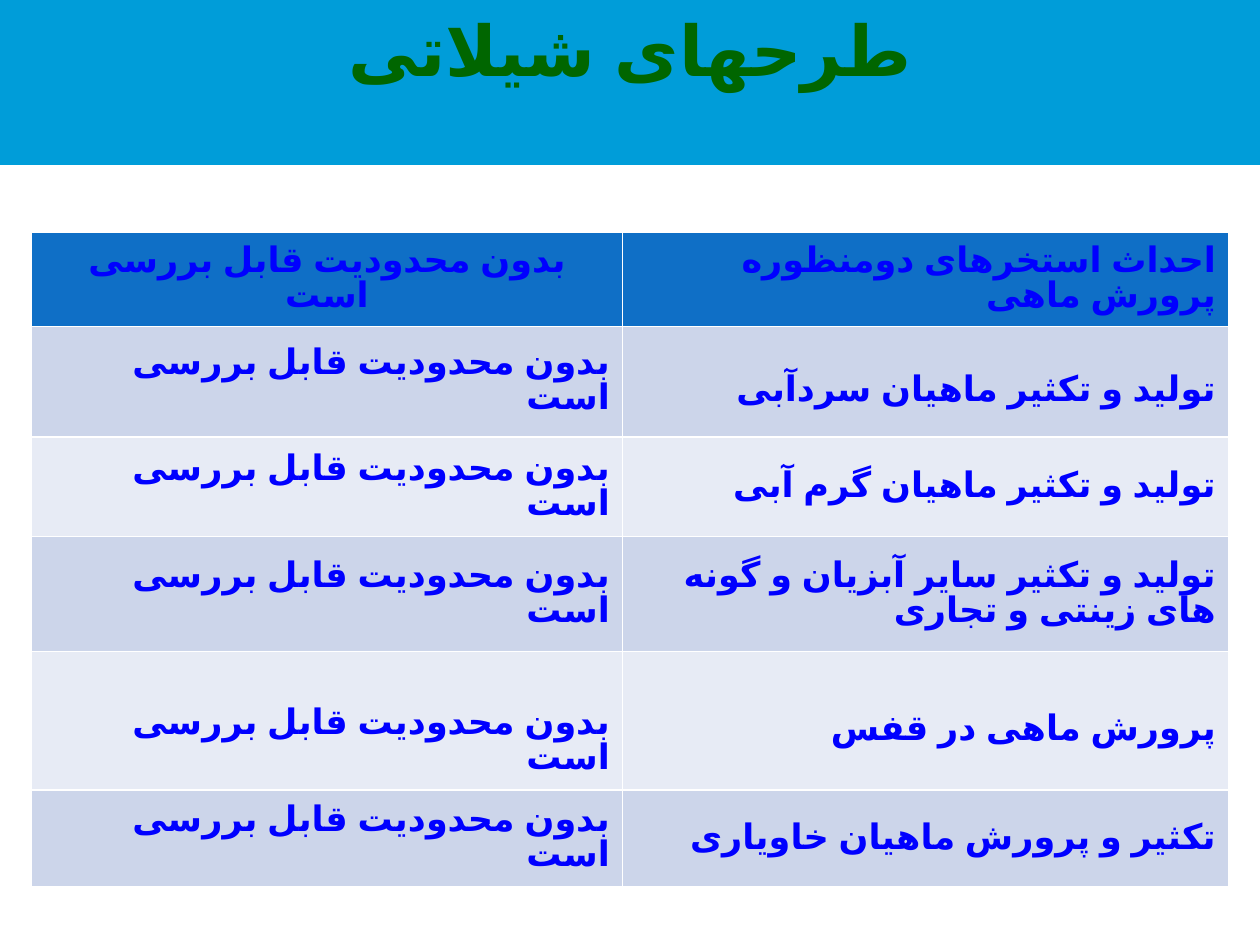
from pptx import Presentation
from pptx.dml.color import RGBColor
from pptx.enum.text import MSO_ANCHOR, PP_ALIGN
from pptx.util import Inches, Pt

FACE = "Vollkorn"
SKY = RGBColor(0x00, 0x9D, 0xD9)
GREEN = RGBColor(0x00, 0x66, 0x00)
BLUE = RGBColor(0x00, 0x00, 0xFF)
HEAD = RGBColor(0x0F, 0x6F, 0xC6)
BANDS = [RGBColor(0xE7, 0xEB, 0xF5), RGBColor(0xCC, 0xD5, 0xEA)]

STATUS = "بدون محدودیت قابل بررسی است"
PLANS = [
    ("احداث استخرهای دومنظوره پرورش ماهی", 0.75, None),
    ("تولید و تکثیر ماهیان سردآبی", 0.88, 1.5),
    ("تولید و تکثیر ماهیان گرم آبی", 0.79, None),
    ("تولید و تکثیر سایر آبزیان و گونه های زینتی و تجاری", 0.91, None),
    ("پرورش ماهی در قفس", 1.1, 1.5),
    ("تکثیر و پرورش ماهیان خاویاری", 0.77, None),
]
CAGE = 4


def write(frame, text, align, size, color, space=None):
    para = frame.paragraphs[0]
    para.alignment = align
    para.line_spacing = space
    para._p.get_or_add_pPr().set("rtl", "1")
    run = para.add_run()
    run.text = text
    run.font.color.rgb = color
    for key, value in {"size": Pt(size), "bold": True, "name": FACE}.items():
        setattr(run.font, key, value)
    run._r.get_or_add_rPr().set("lang", "fa-IR")


def paint(part, color):
    part.fill.solid()
    part.fill.fore_color.rgb = color


def add_title(slide, left, top, width, height):
    title = slide.shapes.title
    box = {"left": left, "top": top, "width": width, "height": height}
    for key, value in box.items():
        setattr(title, key, value)
    paint(title, SKY)
    title.text_frame.vertical_anchor = MSO_ANCHOR.TOP
    write(title.text_frame, "طرحهای شیلاتی", PP_ALIGN.CENTER, 40, GREEN)


def add_plans(slide, left, top, width, height):
    table = slide.shapes.add_table(len(PLANS), 2, left, top, width, height).table
    table.columns[0].width = Inches(4.69)
    table.columns[1].width = width - Inches(4.69)
    for row, (plan, tall, space) in enumerate(PLANS):
        table.rows[row].height = Inches(tall)
        for col, (text, gap) in enumerate([(STATUS, None), (plan, space)]):
            cell = table.cell(row, col)
            cell.vertical_anchor = MSO_ANCHOR.MIDDLE
            paint(cell, BANDS[row % 2] if row else HEAD)
            first = row == 0 and col == 0
            align = PP_ALIGN.CENTER if first else PP_ALIGN.RIGHT
            write(cell.text_frame, text, align, 20, BLUE, gap)
    table.cell(CAGE, 0).margin_top = Inches(0.38)


def main():
    deck = Presentation()
    deck.slide_width, deck.slide_height = Inches(10), Inches(7.5)
    slide = deck.slides.add_slide(deck.slide_layouts[5])
    add_title(slide, Inches(0), Inches(0), Inches(10), Inches(1.31))
    add_plans(slide, Inches(0.25), Inches(1.84), Inches(9.5), Inches(5.2))
    deck.save("out.pptx")


if __name__ == "__main__":
    main()
